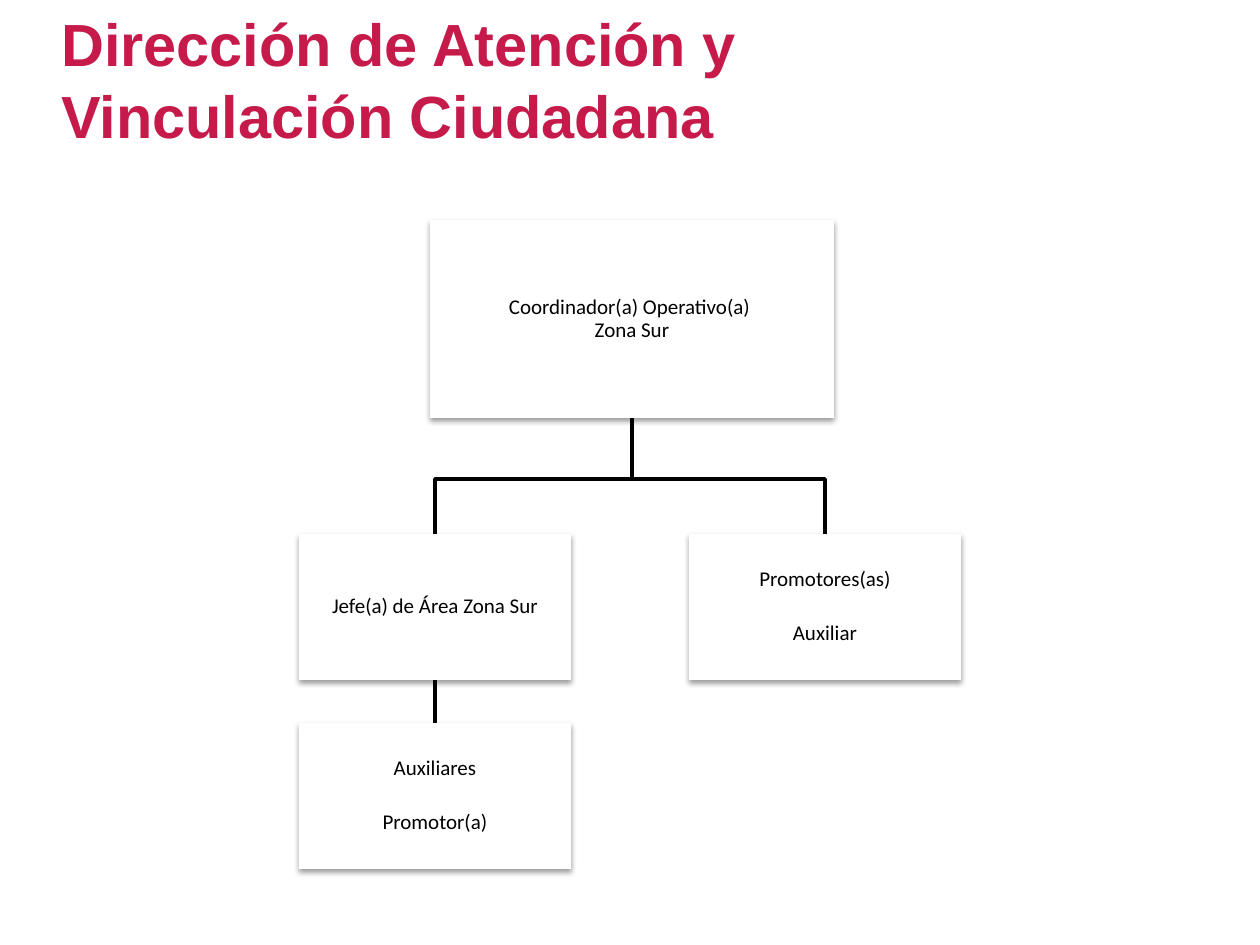
import pptx
import pptx.dml.color
import pptx.enum.shapes
import pptx.enum.text
import pptx.oxml
import pptx.oxml.ns
import pptx.util

SCALE = 914400 / 126  # EMU per px
ALIGN = pptx.enum.text.PP_ALIGN
ANCHOR = pptx.enum.text.MSO_ANCHOR
SHADOW = (
    f'<a:outerShdw {pptx.oxml.ns.nsdecls("a")} blurRad="40000" dist="20000" '
    'dir="5400000" rotWithShape="0"><a:srgbClr val="000000">'
    '<a:alpha val="38000"/></a:srgbClr></a:outerShdw>'
)


def px(length):
    return pptx.util.Emu(round(length * SCALE))


def color(code):
    return pptx.dml.color.RGBColor.from_string(code)


class Chart:
    """Style and current slide of the organisation chart."""

    title_color = "C51A4A"
    ink = "000000"
    paper = "FFFFFF"

    def __init__(self, page):
        self.page = page

    def set_font(self, para, name, size, code, bold=False):
        font = para.font
        font.name, font.size, font.bold = name, pptx.util.Pt(size), bold
        font.color.rgb = color(code)

    def set_line(self, shape):
        shape.line.color.rgb = color(self.ink)
        shape.line.width = pptx.util.Pt(2)

    def title(self, text, left, top, width, height):
        box = self.page.shapes.add_textbox(px(left), px(top), px(width), px(height))
        frame = box.text_frame
        frame.word_wrap = True
        frame.auto_size = pptx.enum.text.MSO_AUTO_SIZE.SHAPE_TO_FIT_TEXT
        para = frame.paragraphs[0]
        para.text = text
        self.set_font(para, "Arial", 34, self.title_color, bold=True)

    def straight(self, x, top, bottom):
        line = self.page.shapes.add_connector(
            pptx.enum.shapes.MSO_CONNECTOR.STRAIGHT, px(x), px(top), px(x), px(bottom))
        self.set_line(line)
        line._element.spPr.append(pptx.oxml.parse_xml(
            f'<a:effectLst {pptx.oxml.ns.nsdecls("a")}/>'))

    def branch(self, points):
        builder = self.page.shapes.build_freeform(*points[0], scale=SCALE)
        builder.add_line_segments(points[1:], close=False)
        shape = builder.convert_to_shape()
        shape.shadow.inherit = False
        shape.fill.background()
        self.set_line(shape)

    def post(self, texts, left, top, width, height):
        box = self.page.shapes.add_shape(
            pptx.enum.shapes.MSO_SHAPE.RECTANGLE, px(left), px(top), px(width), px(height))
        box.fill.solid()
        box.fill.fore_color.rgb = color(self.paper)
        box.line.fill.background()
        box.shadow.inherit = False
        effects = box._element.spPr.find(pptx.oxml.ns.qn("a:effectLst"))
        effects.append(pptx.oxml.parse_xml(SHADOW))

        frame = box.text_frame
        frame.word_wrap = True
        frame.vertical_anchor = ANCHOR.MIDDLE
        frame.margin_left = frame.margin_right = px(1)
        frame.margin_top = frame.margin_bottom = px(1)
        for index, text in enumerate(texts):
            para = frame.paragraphs[0] if index == 0 else frame.add_paragraph()
            para.text = text
            para.alignment = ALIGN.CENTER
            para.line_spacing = 0.9
            if index:
                para.space_before = pptx.util.Pt(18)
            self.set_font(para, "Calibri", 12, self.ink)


def main():
    deck = pptx.Presentation()
    deck.slide_width, deck.slide_height = px(1260), px(945)
    chart = Chart(deck.slides.add_slide(deck.slide_layouts[6]))

    # Title
    chart.title("Dirección de Atención y Vinculación Ciudadana", 49, 1, 806, 158)

    # Grid of the posts
    head_left, head_top, head_width, head_height = 430, 220, 404, 198
    width, height = 272, 146
    left, right = 299, 689
    middle, low = 534, 723

    # Lines, behind the posts
    head_x, head_bottom, bend = head_left + head_width // 2, head_top + head_height, 479
    chart.straight(left + width // 2, middle + height, low)
    for column in (left, right):
        x = column + width // 2
        chart.branch([(head_x, head_bottom), (head_x, bend), (x, bend), (x, middle)])

    # Posts
    chart.post(["Coordinador(a) Operativo(a) \vZona Sur"],
               head_left, head_top, head_width, head_height)
    for texts, column, row in (
        (["Promotores(as)", "Auxiliar"], right, middle),
        (["Jefe(a) de Área Zona Sur"], left, middle),
        (["Auxiliares", "Promotor(a)"], left, low),
    ):
        chart.post(texts, column, row, width, height)

    deck.save("out.pptx")


if __name__ == "__main__":
    main()
